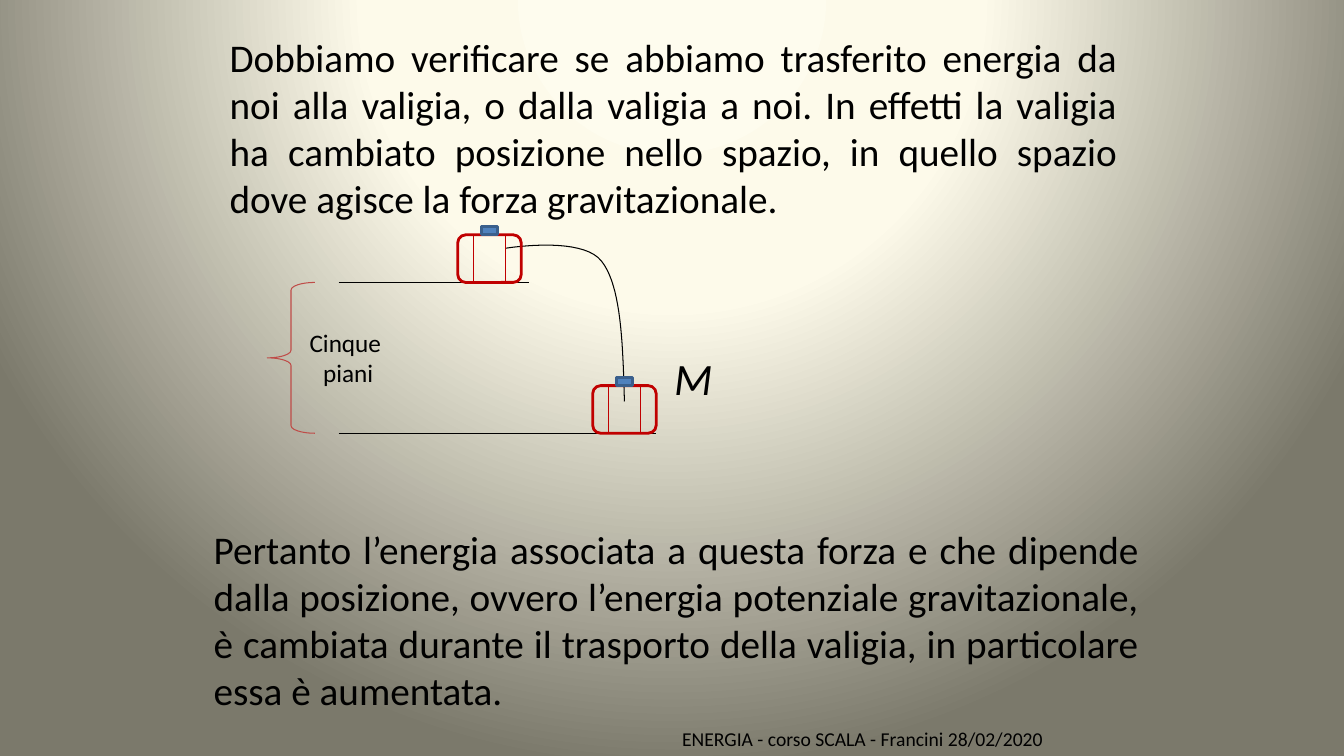
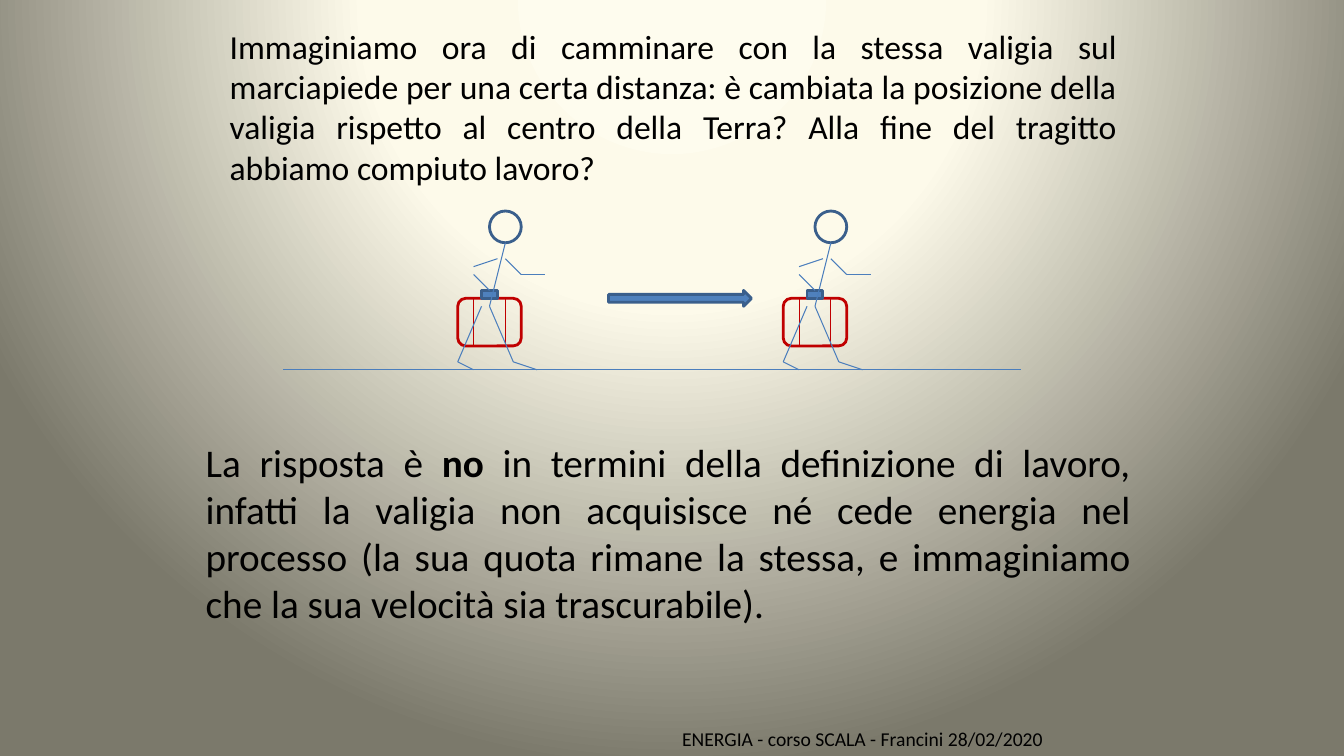
"""Build two slides on work, energy and a suitcase."""
from dataclasses import dataclass
from itertools import pairwise

from lxml.etree import SubElement as add_node
from pptx import Presentation
from pptx.dml.color import RGBColor
from pptx.enum.shapes import MSO_CONNECTOR as Link, MSO_SHAPE as Form
from pptx.enum.text import MSO_ANCHOR as Anchor, MSO_AUTO_SIZE as Fit, PP_ALIGN as Align
from pptx.oxml import parse_xml
from pptx.oxml.ns import nsdecls, qn
from pptx.shapes.autoshape import Shape
from pptx.shapes.connector import Connector
from pptx.slide import Slide
from pptx.text.text import TextFrame
from pptx.util import Cm, Emu, Inches, Pt

BLACK = RGBColor(0x00, 0x00, 0x00)
RED = RGBColor(0xC0, 0x00, 0x00)
ROSE = RGBColor(0xBF, 0x4C, 0x48)
BLUE = RGBColor(0x4F, 0x81, 0xBD)
NAVY = RGBColor(0x3A, 0x5F, 0x8C)
SKY = RGBColor(0x4B, 0x7E, 0xBC)
GLOW = (
    (0, RGBColor(0xFE, 0xFC, 0xEE)),
    (40, RGBColor(0xFD, 0xFA, 0xEA)),
    (100, RGBColor(0x7B, 0x79, 0x6B)),
)

FONT = "Calibri"
UNIT = Cm(0.4)
LEFT, TOP = Inches(4.54), Inches(2.33)
THIN, THICK = 0.75, 2
WALK_ROW = 4
Point = tuple[float, float]


@dataclass(frozen=True)
class Box:
    """An area in grid columns and rows."""
    col: float
    row: float
    wide: float
    high: float

    def place(self) -> tuple[Emu, Emu, Emu, Emu]:
        """Give the area in slide lengths."""
        return (*spot((self.col, self.row)), Emu(round(self.wide * UNIT)), Emu(round(self.high * UNIT)))


@dataclass(frozen=True)
class Part:
    """A run of text."""
    text: str
    bold: bool = False
    slant: bool = False


@dataclass(frozen=True)
class Limb:
    """A chain of straight strokes, measured from the suitcase."""
    dots: tuple[Point, ...]
    held: bool = False


LIMBS = (
    Limb(((3, -3.5), (2, 0.5), (3.5, 4), (5, 4.5))),
    Limb(((1.5, 0.5), (0, 4), (1, 4.5))),
    Limb(((2.5, -2.5), (1, -2))),
    Limb(((1, -1.5), (2, -0.5)), held=True),
    Limb(((3, -2.5), (4, -1.5), (5.5, -1.5))),
)
TRAIL = (
    ((10.5, 10.5), (10.4, 6.9), (10.3, 3.2), (9.05, 1.65)),
    ((9.05, 1.65), (7.8, 0.05), (3, 0.85), (3, 0.85)),
)
FOOT = Box(13.5, 30.7, 31.75, 2.1)


def spot(dot: Point) -> tuple[Emu, Emu]:
    """Turn a grid point into a slide point."""
    return Emu(round(LEFT + dot[0] * UNIT)), Emu(round(TOP + dot[1] * UNIT))


def curve(ends: tuple[Point, ...], steps: int = 20) -> list[Point]:
    """Sample a cubic curve."""
    dots = []
    for step in range(steps + 1):
        t = step / steps
        parts = ((1 - t) ** 3, 3 * t * (1 - t) ** 2, 3 * t * t * (1 - t), t ** 3)
        dots.append(tuple(sum(p * end[i] for p, end in zip(parts, ends)) for i in (0, 1)))
    return dots


def style(item: Shape, line: RGBColor, width: float, fill: RGBColor | None = None) -> None:
    """Set the line and fill of a shape."""
    item.shadow.inherit = False
    item.line.color.rgb = line
    item.line.width = Pt(width)
    if fill is None:
        item.fill.background()
    else:
        item.fill.solid()
        item.fill.fore_color.rgb = fill


def draw(slide: Slide, form: Form, box: Box, line: RGBColor, width: float = THICK,
         fill: RGBColor | None = None) -> Shape:
    """Add a preset shape."""
    item = slide.shapes.add_shape(form, *box.place())
    style(item, line, width, fill)
    return item


def stroke(slide: Slide, start: Point, end: Point, color: RGBColor) -> Connector:
    """Add a thin straight line."""
    item = slide.shapes.add_connector(Link.STRAIGHT, *spot(start), *spot(end))
    item.line.color.rgb = color
    item.line.width = Pt(THIN)
    add_node(item.element.find(qn("p:spPr")), qn("a:effectLst"))
    return item


def write(frame: TextFrame, lines: list[list[Part]], size: int, align: Align) -> None:
    """Fill a text frame run by run."""
    for count, parts in enumerate(lines):
        para = frame.add_paragraph() if count else frame.paragraphs[0]
        para.alignment = align
        for part in parts:
            run = para.add_run()
            run.text = part.text
            font = run.font
            font.name, font.size = FONT, Pt(size)
            font.bold, font.italic = part.bold, part.slant
            font.color.rgb = BLACK


def label(slide: Slide, box: Box, lines: list[list[Part]], size: int,
          align: Align = Align.LEFT, wrap: bool = True) -> None:
    """Add a text box."""
    frame = slide.shapes.add_textbox(*box.place()).text_frame
    frame.word_wrap = wrap
    frame.auto_size = Fit.SHAPE_TO_FIT_TEXT
    write(frame, lines, size, align)


def body(slide: Slide, box: Box, text: str, size: int) -> None:
    """Fill the body placeholder without a bullet."""
    item = slide.placeholders[1]
    item.left, item.top, item.width, item.height = box.place()
    frame = item.text_frame
    frame.auto_size, frame.vertical_anchor = Fit.NONE, Anchor.TOP
    write(frame, [[Part(text)]], size, Align.JUSTIFY)
    props = frame.paragraphs[0]._p.get_or_add_pPr()
    props.set("marL", "0")
    props.set("indent", "0")
    add_node(props, qn("a:buNone"))


def case(slide: Slide, col: float, row: float) -> Shape:
    """Draw a suitcase and return its handle."""
    draw(slide, Form.ROUNDED_RECTANGLE, Box(col, row, 4, 3), RED)
    for strap in (col + 1, col + 3):
        stroke(slide, (strap, row), (strap, row + 3), RED)
    return draw(slide, Form.RECTANGLE, Box(col + 1.5, row - 0.5, 1, 0.5), NAVY, fill=BLUE)


def walker(slide: Slide, col: float, row: float) -> None:
    """Draw a stick figure with a suitcase."""
    handle = case(slide, col, row)
    draw(slide, Form.OVAL, Box(col + 2, row - 5.5, 2, 2), NAVY)
    for limb in LIMBS:
        dots = [(col + x, row + y) for x, y in limb.dots]
        for start, end in pairwise(dots):
            item = stroke(slide, start, end, SKY)
            if limb.held:
                item.end_connect(handle, 0)


def trail(slide: Slide) -> None:
    """Draw the path of the raised suitcase."""
    dots = [spot(dot) for ends in TRAIL for dot in curve(ends)]
    pen = slide.shapes.build_freeform(*dots[0])
    pen.add_line_segments(dots[1:], close=False)
    style(pen.convert_to_shape(), BLACK, THIN)


def backdrop(deck: Presentation) -> None:
    """Give the master its round gradient."""
    master = deck.slide_master
    master.background.fill.solid()
    stops = "".join(f'<a:gs pos="{at * 1000}"><a:srgbClr val="{color}"/></a:gs>' for at, color in GLOW)
    props = master.element.find(".//" + qn("p:bgPr"))
    props.replace(props[0], parse_xml(
        f'<a:gradFill {nsdecls("a")} rotWithShape="1"><a:gsLst>{stops}</a:gsLst>'
        '<a:path path="circle"><a:fillToRect l="50000" t="-80000" r="50000" b="180000"/>'
        "</a:path></a:gradFill>"))


def begin(deck: Presentation) -> Slide:
    """Add a slide with its footer and no title."""
    slide = deck.slides.add_slide(deck.slide_layouts[1])
    title = slide.shapes.title.element
    title.getparent().remove(title)
    label(slide, FOOT, [[Part("ENERGIA - corso SCALA - Francini 28/02/2020")]], 14)
    return slide


def lift(deck: Presentation) -> None:
    """Show the suitcase carried up five floors."""
    slide = begin(deck)
    body(slide, Box(-15, -13, 57.15, 13.5),
         "Dobbiamo verificare se abbiamo trasferito energia da noi alla valigia, o dalla valigia a noi. "
         "In effetti la valigia ha cambiato posizione nello spazio, in quello spazio dove agisce la forza "
         "gravitazionale.", 28)
    for end, row in ((4.5, 3), (12.5, 12.5)):
        stroke(slide, (-7.5, row), (end, row), BLACK)
    brace = draw(slide, Form.LEFT_BRACE, Box(-12, 3, 3, 9.5), ROSE, THIN)
    brace.adjustments[0] = 0.16
    trail(slide)
    label(slide, Box(13, 7, 3.75, 4), [[Part("M", slant=True)]], 32, wrap=False)
    for col, row in ((8.5, 9.5), (0, 0)):
        case(slide, col, row)
    label(slide, Box(-10, 5.5, 6.2, 4.5), [[Part("Cinque ")], [Part("piani")]], 18, Align.CENTER, False)
    label(slide, Box(-16, 18, 59.5, 14.5), [[Part(
        "Pertanto l’energia associata a questa forza e che dipende dalla posizione, ovvero l’energia "
        "potenziale gravitazionale, è cambiata durante il trasporto della valigia, in particolare essa "
        "è aumentata.")]], 28, Align.JUSTIFY)


def walk(deck: Presentation) -> None:
    """Show the suitcase carried along level ground."""
    slide = begin(deck)
    body(slide, Box(-15, -13.5, 57.15, 11.5),
         "Immaginiamo ora di camminare con la stessa valigia sul marciapiede per una certa distanza: "
         "è cambiata la posizione della valigia rispetto al centro della Terra? Alla fine del tragitto "
         "abbiamo compiuto lavoro?", 24)
    for col in (0, 20.5):
        walker(slide, col, WALK_ROW)
    stroke(slide, (-11, WALK_ROW + 4.5), (35.5, WALK_ROW + 4.5), SKY)
    draw(slide, Form.RIGHT_ARROW, Box(9.5, WALK_ROW - 0.5, 9, 1), NAVY, fill=BLUE)
    label(slide, Box(-16.5, 12.5, 59.5, 12.6), [[
        Part("La risposta è "), Part("no", bold=True),
        Part(" in termini della definizione di lavoro, infatti la valigia non acquisisce né cede energia "
             "nel processo (la sua quota rimane la stessa, e immaginiamo che la sua velocità sia "
             "trascurabile).")]], 28, Align.JUSTIFY)


def main() -> None:
    """Build and save the deck."""
    deck = Presentation()
    deck.slide_width, deck.slide_height = Inches(13.33), Inches(7.5)
    backdrop(deck)
    lift(deck)
    walk(deck)
    deck.save("out.pptx")


if __name__ == "__main__":
    main()
